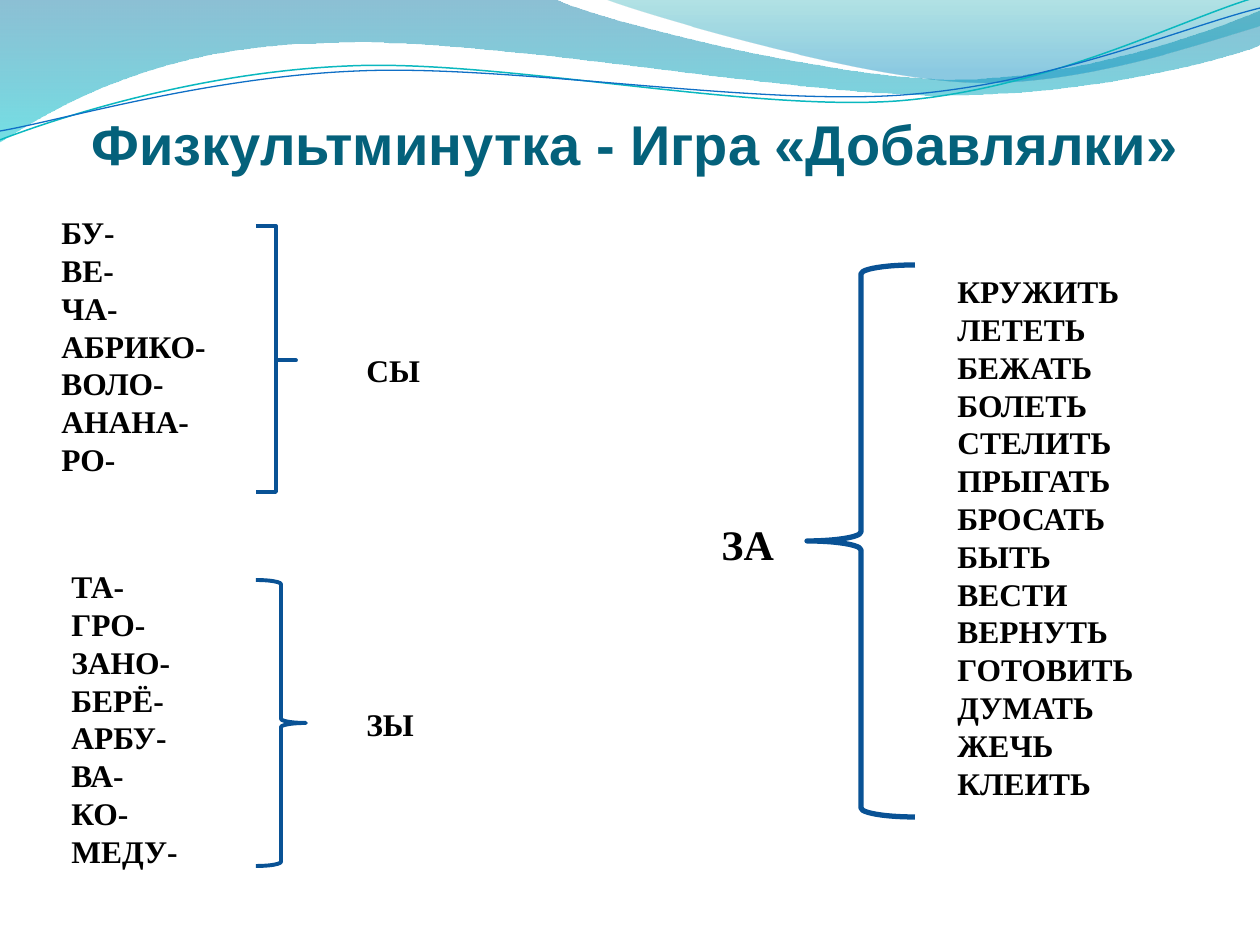
import math
from dataclasses import dataclass

from lxml import etree
from pptx import Presentation
from pptx import util as u
from pptx.dml import color
from pptx.enum import shapes, text
from pptx.oxml import ns

PX = 914400 / 126
COLORS = {
    "title": "04617B", "text": "000000", "brace": "095295",
    "sea": "0074A1", "aqua": "00C6CF", "teal": "00A1A9", "sky": "008BBF",
    "teal_line": "0AB8BF", "blue_line": "0F6FC6",
}


@dataclass
class Stop:
    position: float
    color: str
    alpha: int


@dataclass
class Wave:
    start: tuple
    segments: list
    stops: tuple = ()
    line: str = ""
    width: float = 0
    center: tuple = (0, 0)
    rotation: float = 0


@dataclass
class Label:
    box: tuple
    words: str
    size: int = 18


@dataclass
class Brace:
    kind: int
    box: tuple
    width: float
    adjustments: tuple = ()


WAVES = [
    Wave((0, 0), [
        (554, -1),
        (600, 21, 837, 79, 955, 79), (1075, 79, 1207, 33, 1260, 11),
        (1261, 45),
        (1239, 55, 1096, 96, 940, 95), (784, 95, 481, 35, 324, 43),
        (163, 45, 58, 105, -1, 142),
    ], stops=(Stop(0, "sea", 45), Stop(1, "aqua", 55))),
    Wave((604, -1), [
        (641, 14, 859, 78, 969, 82), (1079, 87, 1211, 40, 1260, 26),
        (1260, 0),
    ], stops=(Stop(0, "teal", 30), Stop(0.8, "sky", 45))),
    Wave((0, 140), [
        (60, 117, 199, 72, 349, 66), (498, 59, 747, 112, 898, 101),
        (1049, 89, 1182, 19, 1257, -3),
    ], line="teal_line", width=0.85, center=(629, 72), rotation=-2.7),
    Wave((0, 131), [
        (59, 121, 207, 77, 357, 71), (508, 64, 752, 106, 903, 95),
        (1053, 84, 1186, 26, 1260, 8),
    ], line="blue_line", width=0.75, center=(629, 74), rotation=-2.7),
]

LABELS = [
    Label((59, 561, 168, 318), "ТА- ГРО- ЗАНО- БЕРЁ- АРБУ- ВА- КО- МЕДУ-"),
    Label((49, 207, 186, 280), "БУ- ВЕ- ЧА- АБРИКО- ВОЛО- АНАНА- РО-"),
    Label((354, 345, 88, 50), "СЫ"),
    Label((354, 699, 88, 50), "ЗЫ"),
    Label((945, 266, 207, 547),
          "КРУЖИТЬ ЛЕТЕТЬ БЕЖАТЬ БОЛЕТЬ СТЕЛИТЬ ПРЫГАТЬ БРОСАТЬ "
          "БЫТЬ ВЕСТИ ВЕРНУТЬ ГОТОВИТЬ ДУМАТЬ ЖЕЧЬ КЛЕИТЬ"),
    Label((709, 512, 79, 63), "ЗА", 24),
]

BRACES = [
    Brace(shapes.MSO_SHAPE.LEFT_BRACE, (807, 265, 108, 552), 3),
    Brace(shapes.MSO_SHAPE.RIGHT_BRACE, (256, 226, 40, 266), 2.25, (0, 0.505)),
    Brace(shapes.MSO_SHAPE.RIGHT_BRACE, (256, 580, 50, 286), 2.25),
]


def emu(px: float) -> int:
    return round(px * PX)


def rgb(name: str) -> color.RGBColor:
    return color.RGBColor.from_string(COLORS[name])


def add_run(p, words: str, font: str, size: int, name: str) -> None:
    r = p.add_run()
    r.text = words
    r.font.name = font
    r.font.size = u.Pt(size)
    r.font.bold = True
    r.font.color.rgb = rgb(name)


def level(point: tuple, wave: Wave) -> tuple:
    angle = math.radians(-wave.rotation)
    cx, cy = wave.center
    dx, dy = point[0] - cx, point[1] - cy
    return (emu(cx + dx * math.cos(angle) - dy * math.sin(angle)),
            emu(cy + dx * math.sin(angle) + dy * math.cos(angle)))


def bend(sp, segments: list) -> None:
    lines = iter(list(sp._element.iter(ns.qn("a:lnTo"))))
    for seg in segments:
        parts = [next(lines) for _ in range(len(seg) // 2)]
        if len(parts) == 3:
            curve = etree.Element(ns.qn("a:cubicBezTo"))
            parts[0].addprevious(curve)
            for part in parts:
                curve.append(part[0])
                part.getparent().remove(part)


def style_outline(sp, name: str, width: float) -> None:
    sp.shadow.inherit = False
    sp.fill.background()
    sp.line.color.rgb = rgb(name)
    sp.line.width = u.Pt(width)


def fill_gradient(sp, stops: tuple) -> None:
    sp.shadow.inherit = False
    sp.line.fill.background()
    sp.fill.gradient()
    sp.fill.gradient_angle = 270
    for target, stop in zip(sp.fill.gradient_stops, stops):
        target.color.rgb = rgb(stop.color)
        target.position = stop.position
    for clr, stop in zip(sp._element.spPr.iter(ns.qn("a:srgbClr")), stops):
        etree.SubElement(clr, ns.qn("a:alpha"), val=str(stop.alpha * 1000))


def draw_wave(s, wave: Wave) -> None:
    points = [level(seg[i:i + 2], wave)
              for seg in wave.segments for i in range(0, len(seg), 2)]
    builder = s.shapes.build_freeform(*level(wave.start, wave), scale=1.0)
    builder.add_line_segments(points, close=bool(wave.stops))
    sp = builder.convert_to_shape()
    bend(sp, wave.segments)
    sp.rotation = wave.rotation
    if wave.stops:
        fill_gradient(sp, wave.stops)
    else:
        style_outline(sp, wave.line, wave.width)


def draw_title(s, words: str) -> None:
    sp = s.shapes.title
    s.shapes._spTree.append(sp._element)
    sp.left, sp.top, sp.width, sp.height = map(emu, (63, 96, 1145, 81))
    tf = sp.text_frame
    tf.margin_left = tf.margin_right = tf.margin_bottom = 0
    tf.margin_top = emu(6)
    tf.vertical_anchor = text.MSO_ANCHOR.BOTTOM
    p = tf.paragraphs[0]
    p.alignment = text.PP_ALIGN.CENTER
    add_run(p, words, "Arial", 32, "title")


def draw_label(s, label: Label) -> None:
    tf = s.shapes.add_textbox(*map(emu, label.box)).text_frame
    tf.word_wrap = True
    tf.auto_size = text.MSO_AUTO_SIZE.SHAPE_TO_FIT_TEXT
    for i, word in enumerate(label.words.split()):
        p = tf.add_paragraph() if i else tf.paragraphs[0]
        add_run(p, word, "Times New Roman", label.size, "text")


def draw_brace(s, brace: Brace) -> None:
    sp = s.shapes.add_shape(brace.kind, *map(emu, brace.box))
    for i, value in enumerate(brace.adjustments):
        sp.adjustments[i] = value
    style_outline(sp, "brace", brace.width)


def main() -> None:
    prs = Presentation()
    prs.slide_width, prs.slide_height = emu(1260), emu(945)
    s = prs.slides.add_slide(prs.slide_layouts[5])
    for wave in WAVES:
        draw_wave(s, wave)
    draw_title(s, "Физкультминутка - Игра «Добавлялки»")
    for label in LABELS:
        draw_label(s, label)
    for brace in BRACES:
        draw_brace(s, brace)
    prs.save("out.pptx")


if __name__ == "__main__":
    main()
